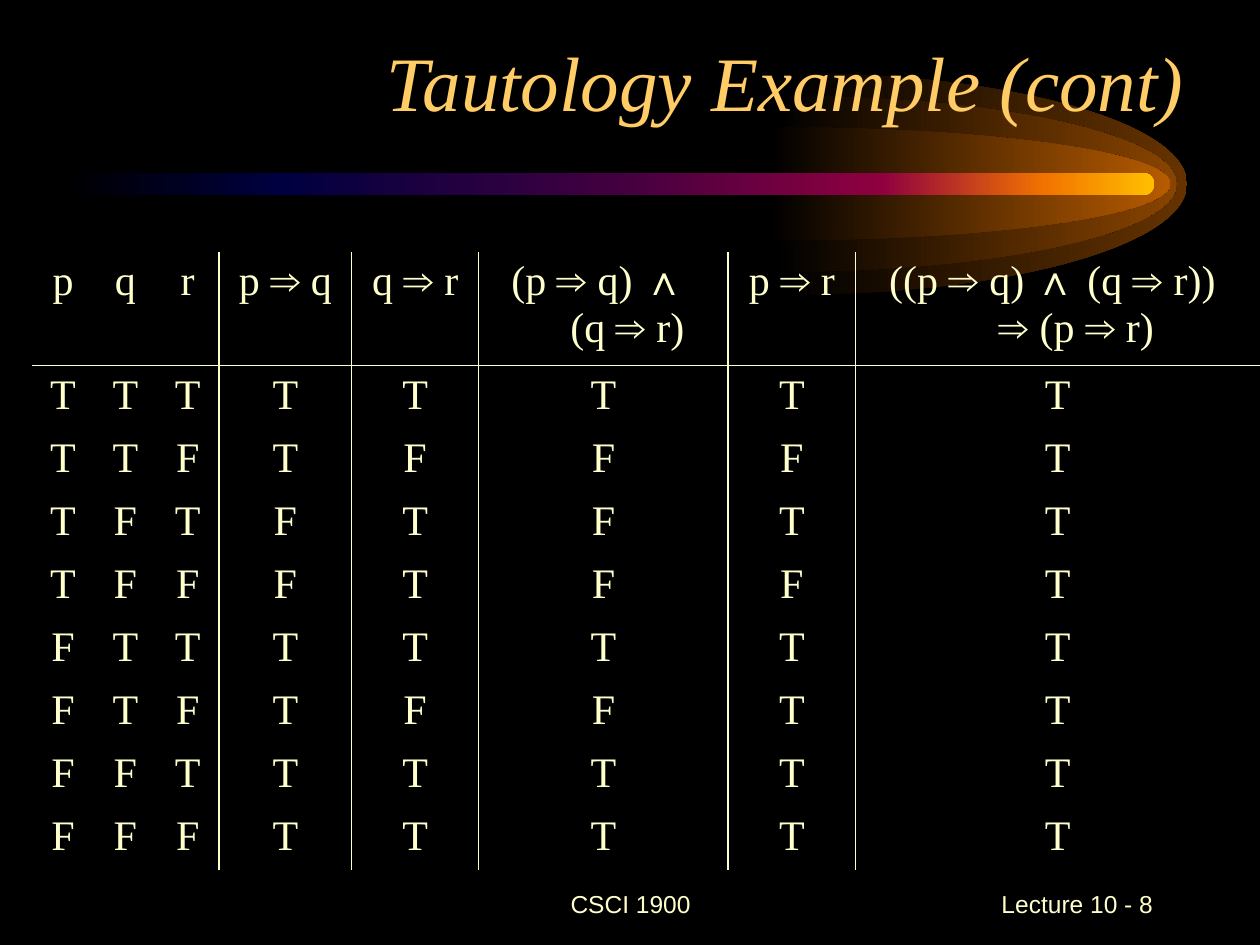
import pptx
import pptx.util
import pptx.dml.color
import pptx.enum.shapes
import pptx.enum.text
import pptx.oxml.ns
from lxml import etree

Inches = pptx.util.Inches
Align = pptx.enum.text.PP_ALIGN
Anchor = pptx.enum.text.MSO_ANCHOR
qn = pptx.oxml.ns.qn

CREAM, GOLD, BLACK = "FFFFCC", "FFCC66", "000000"
SERIF, SANS = "Times New Roman", "Arial"
TEXTS = [
    ("CSCI 1900", (3.42, 6.92, 3.17, 0.5), Align.CENTER, Anchor.MIDDLE, (14, SANS, CREAM)),
    (" Lecture 10 - 8", (7.17, 6.92, 2.08, 0.5), Align.RIGHT, Anchor.MIDDLE, (14, SANS, CREAM)),
    ("Tautology Example (cont)", (0, 0, 9.5, 1.06), Align.RIGHT, Anchor.BOTTOM,
     (44, SERIF, GOLD, True)),
]
HEADS = ["p", "q", "r", "p ⇒ q", "q ⇒ r", "(p ⇒ q) ∧ \n(q ⇒ r)", "p ⇒ r",
         "((p ⇒ q) ∧ (q ⇒ r)) \n⇒ (p ⇒ r) "]
TRUTH = ["TTTTTTTT", "TTFTFFFT", "TFTFTFTT", "TFFFTFFT",
         "FTTTTTTT", "FTFTFFTT", "FFTTTTTT", "FFFTTTTT"]
WIDTHS = [0.5, 0.49, 0.5, 1.05, 1.01, 1.98, 1.01, 3.21]
HEAD_H, ROW_H = 0.9, 0.5
RULED = range(2, 7)
GLOWS = [(6.29, 0.88, "663300"), (6.21, 0.7, "894400"), (6.16, 0.45, "B75B00")]
GLOW_Y, GLOW_W, TAIL, BEND = 1.46, 3.13, 0.05, 0.55
COMET = [(0, BLACK), (20, "000040"), (50, "400040"),
         (75, "8F0040"), (90, "F27300"), (100, "FFBF00")]


def color(code):
    return pptx.dml.color.RGBColor.from_string(code)


def shade(shape, stops):
    shape.shadow.inherit = False
    shape.line.fill.background()
    shape.fill.gradient()
    shape.fill.gradient_angle = 0
    group = shape.element.spPr.find(".//" + qn("a:gsLst"))
    for stop in list(group):
        group.remove(stop)
    for pos, code in stops:
        stop = etree.SubElement(group, qn("a:gs"), pos=str(pos * 1000))
        etree.SubElement(stop, qn("a:srgbClr"), val=code)


def write(para, text, align, size, face, code, slant=False):
    para.alignment = align
    for i, line in enumerate(text.split("\n")):
        if i:
            para.add_line_break()
        run = para.add_run()
        run.text = line
        font = run.font
        font.size, font.name, font.italic = pptx.util.Pt(size), face, slant
        font.color.rgb = color(code)


def border(cell, sides):
    props = cell._tc.get_or_add_tcPr()
    for side in "LRTB":
        line = etree.SubElement(props, qn("a:ln" + side), w="12700")
        if side in sides:
            fill = etree.SubElement(line, qn("a:solidFill"))
            etree.SubElement(fill, qn("a:srgbClr"), val=CREAM)
        else:
            etree.SubElement(line, qn("a:noFill"))
    cell.fill.background()


def curve(shape, count):
    lines = list(shape.element.spPr.iter(qn("a:lnTo")))
    for i in range(0, 3 * count, 3):
        bend = etree.Element(qn("a:cubicBezTo"))
        lines[i].addprevious(bend)
        for line in lines[i:i + 3]:
            bend.append(line[0])
            line.getparent().remove(line)


def add_glow(shapes, x, high, code):
    marks = [(0, -1), (BEND, -1), (1, -BEND), (1, 0),
             (1, BEND), (BEND, 1), (-TAIL / GLOW_W, 1), (0, 0)]
    points = [(Inches(x + GLOW_W * u), Inches(GLOW_Y + high * v)) for u, v in marks]
    pen = shapes.build_freeform(*points[0])
    pen.add_line_segments(points[1:], close=True)
    glow = pen.convert_to_shape()
    curve(glow, 2)
    shade(glow, [(0, BLACK), (100, code)])


def add_text(shapes, text, place, align, anchor, style):
    frame = shapes.add_textbox(*map(Inches, place)).text_frame
    frame.word_wrap = True
    frame.vertical_anchor = anchor
    write(frame.paragraphs[0], text, align, *style)


def add_truth(shapes):
    rows = [HEADS] + TRUTH
    high = HEAD_H + ROW_H * len(TRUTH)
    table = shapes.add_table(len(rows), len(HEADS), Inches(0.25), Inches(2),
                             Inches(sum(WIDTHS)), Inches(high)).table
    table.first_row = table.horz_banding = False
    for col, wide in zip(table.columns, WIDTHS):
        col.width = Inches(wide)
    for r, row in enumerate(rows):
        table.rows[r].height = Inches(ROW_H if r else HEAD_H)
        for c, text in enumerate(row):
            cell = table.cell(r, c)
            para = cell.text_frame.paragraphs[0]
            write(para, text, Align.CENTER, 24, SERIF, CREAM)
            props = para._p.get_or_add_pPr()
            props.set("marL", str(Inches(0.38)))
            props.set("indent", str(Inches(-0.38)))
            rules = {"L": c - 1 in RULED, "R": c in RULED, "T": r == 1, "B": r == 0}
            border(cell, [side for side in rules if rules[side]])


def main():
    deck = pptx.Presentation()
    deck.slide_width, deck.slide_height = Inches(10), Inches(7.5)
    slide = deck.slides.add_slide(deck.slide_layouts[6])
    back = slide.background.fill
    back.solid()
    back.fore_color.rgb = color(BLACK)
    shapes = slide.shapes
    for glow in GLOWS:
        add_glow(shapes, *glow)
    bar = shapes.add_shape(pptx.enum.shapes.MSO_SHAPE.ROUNDED_RECTANGLE,
                           Inches(0.5), Inches(1.37), Inches(8.66), Inches(0.18))
    bar.adjustments[0] = 0.5
    shade(bar, COMET)
    for item in TEXTS:
        add_text(shapes, *item)
    add_truth(shapes)
    deck.save("out.pptx")


if __name__ == "__main__":
    main()
